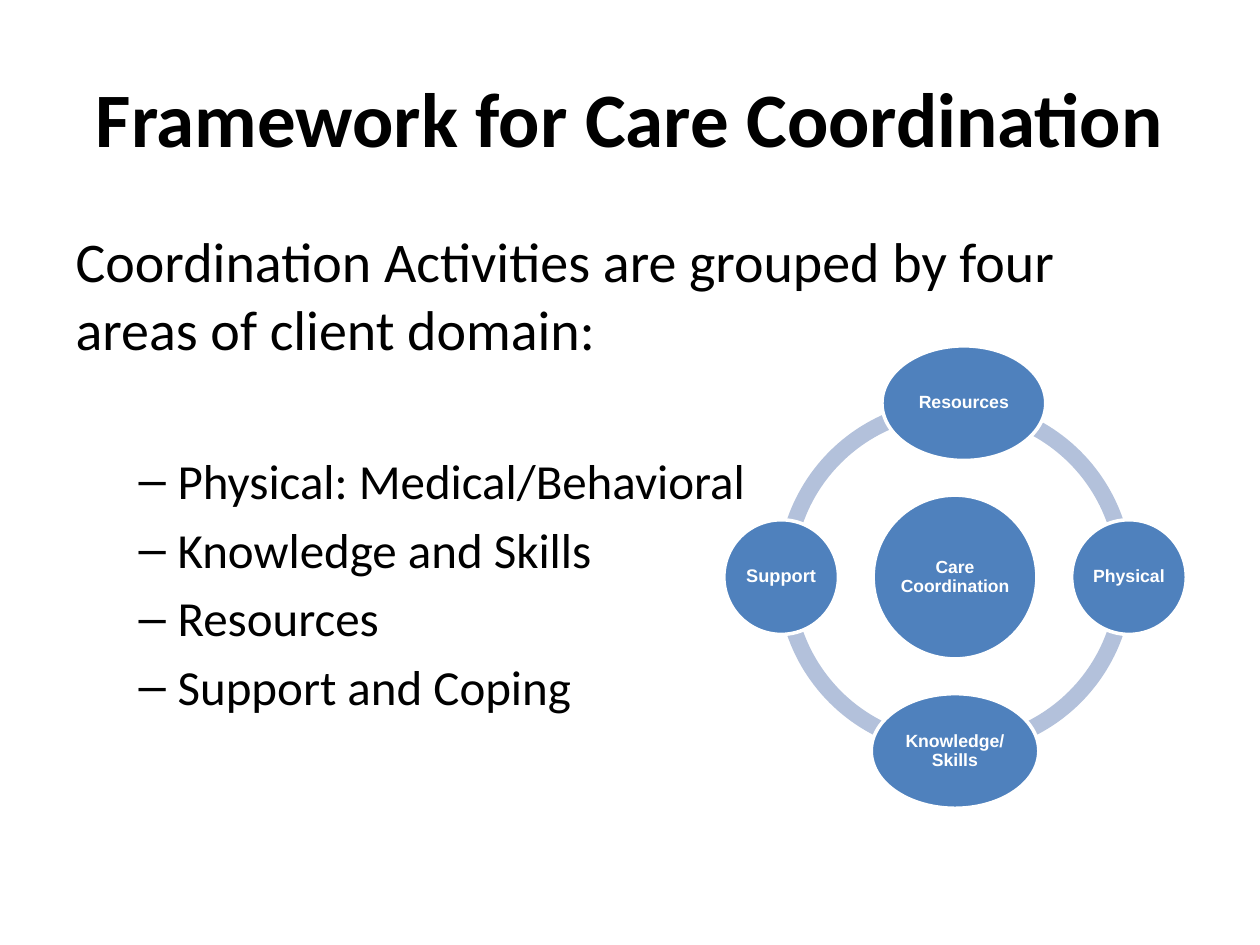
from lxml import etree
from pptx import Presentation
from pptx.dml.color import RGBColor
from pptx.enum.shapes import MSO_SHAPE
from pptx.enum.text import MSO_ANCHOR, MSO_AUTO_SIZE, PP_ALIGN
from pptx.oxml.ns import qn
from pptx.util import Inches, Pt

OVAL, ARC = MSO_SHAPE.OVAL, MSO_SHAPE.BLOCK_ARC
MIDDLE, CENTER = MSO_ANCHOR.MIDDLE, PP_ALIGN.CENTER
NO_FIT = MSO_AUTO_SIZE.NONE

BLACK = RGBColor(0x00, 0x00, 0x00)
WHITE = RGBColor(0xFF, 0xFF, 0xFF)
BLUE = RGBColor(0x4F, 0x81, 0xBD)
PALE = RGBColor(0xB3, 0xC1, 0xDB)

DOMAINS = ["Physical: Medical/Behavioral", "Knowledge and Skills",
           "Resources", "Support and Coping"]
TOP_TURN = 163.62
TURNS = [(108, TOP_TURN), (54, 108), (0, 54), (TOP_TURN, 0)]
RADIUS = 1.38
NODES = [
    ("Care Coordination", 0, 0, 1.3, 1.3, 10),
    ("Resources", 0.07, -RADIUS, 1.3, 0.91, 10.1),
    ("Physical", RADIUS, 0, 0.91, 0.91, 10.1),
    ("Knowledge/ Skills", 0, RADIUS, 1.33, 0.91, 10.1),
    ("Support", -RADIUS, 0, 0.91, 0.91, 10.4),
]


def place(shape, box):
    shape.left, shape.top, shape.width, shape.height = map(Inches, box)


def add_run(para, text, size, font, color, bold=False):
    run = para.add_run()
    run.text = text
    run.font.size = Pt(size)
    run.font.name = font
    run.font.bold = bold
    run.font.color.rgb = color


def set_bullet(para, left, hang, mark=None):
    props = para._p.get_or_add_pPr()
    props.set("marL", str(Inches(left)))
    props.set("indent", str(Inches(hang)))
    if mark:
        etree.SubElement(props, qn("a:buChar")).set("char", mark)
    else:
        etree.SubElement(props, qn("a:buNone"))


def add_title(slide, box):
    title = slide.shapes.title
    place(title, box)
    frame = title.text_frame
    frame.auto_size = NO_FIT
    frame.vertical_anchor = MIDDLE
    para = frame.paragraphs[0]
    para.alignment = CENTER
    add_run(para, "Framework for Care Coordination", 44, "Calibri", BLACK, True)


def add_body(slide, box):
    body = slide.placeholders[1]
    place(body, box)
    frame = body.text_frame
    frame.auto_size = NO_FIT
    intro = frame.paragraphs[0]
    set_bullet(intro, 0, 0)
    add_run(intro, "Coordination Activities are grouped by four areas of client domain:",
            32, "Calibri", BLACK)
    for index, name in enumerate(DOMAINS):
        para = frame.add_paragraph()
        para.level = 1
        if index == 0:
            para.space_before = Pt(51)
        set_bullet(para, 0.81, -0.31, "–")
        add_run(para, name, 28, "Calibri", BLACK)


def add_node(group, text, mid_x, mid_y, width, height, size):
    node = group.shapes.add_shape(OVAL, 0, 0, 0, 0)
    place(node, (mid_x - width / 2, mid_y - height / 2, width, height))
    node.shadow.inherit = False
    node.fill.solid()
    node.fill.fore_color.rgb = BLUE
    node.line.color.rgb = WHITE
    node.line.width = Pt(2)
    frame = node.text_frame
    frame.word_wrap = True
    frame.vertical_anchor = MIDDLE
    frame.margin_left = frame.margin_right = Inches(0.01)
    frame.margin_top = frame.margin_bottom = Inches(0.01)
    para = frame.paragraphs[0]
    para.alignment = CENTER
    para.line_spacing = 0.9
    add_run(para, text, size, "Arial", WHITE, True)


def add_wheel(slide, box):
    left, top, width, height = box
    group = slide.shapes.add_group_shape()
    for start, end in TURNS:
        arc = group.shapes.add_shape(ARC, *map(Inches, box))
        arc.adjustments[0] = start
        arc.adjustments[1] = end
        arc.adjustments[2] = 0.046
        arc.shadow.inherit = False
        arc.fill.solid()
        arc.fill.fore_color.rgb = PALE
        arc.line.fill.background()
    for text, dx, dy, wide, high, size in NODES:
        add_node(group, text, left + width / 2 + dx, top + height / 2 + dy,
                 wide, high, size)


def main():
    deck = Presentation()
    deck.slide_width, deck.slide_height = Inches(10), Inches(7.5)
    slide = deck.slides.add_slide(deck.slide_layouts[1])
    add_title(slide, (0.5, 0.3, 9, 1.25))
    add_body(slide, (0.5, 1.75, 9, 4.95))
    add_wheel(slide, (6.17, 3.17, 2.82, 2.82))
    deck.save("out.pptx")


if __name__ == "__main__":
    main()
